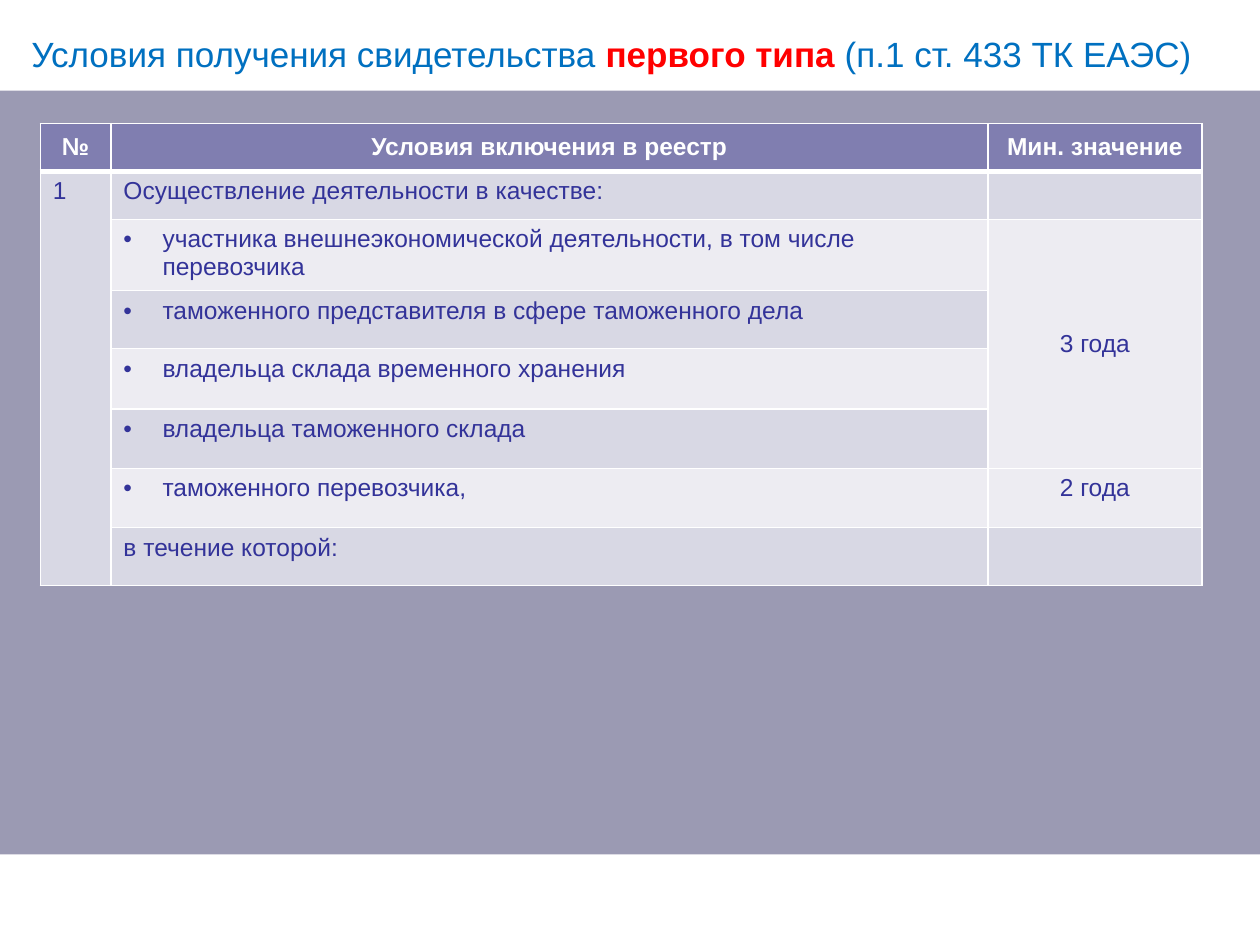
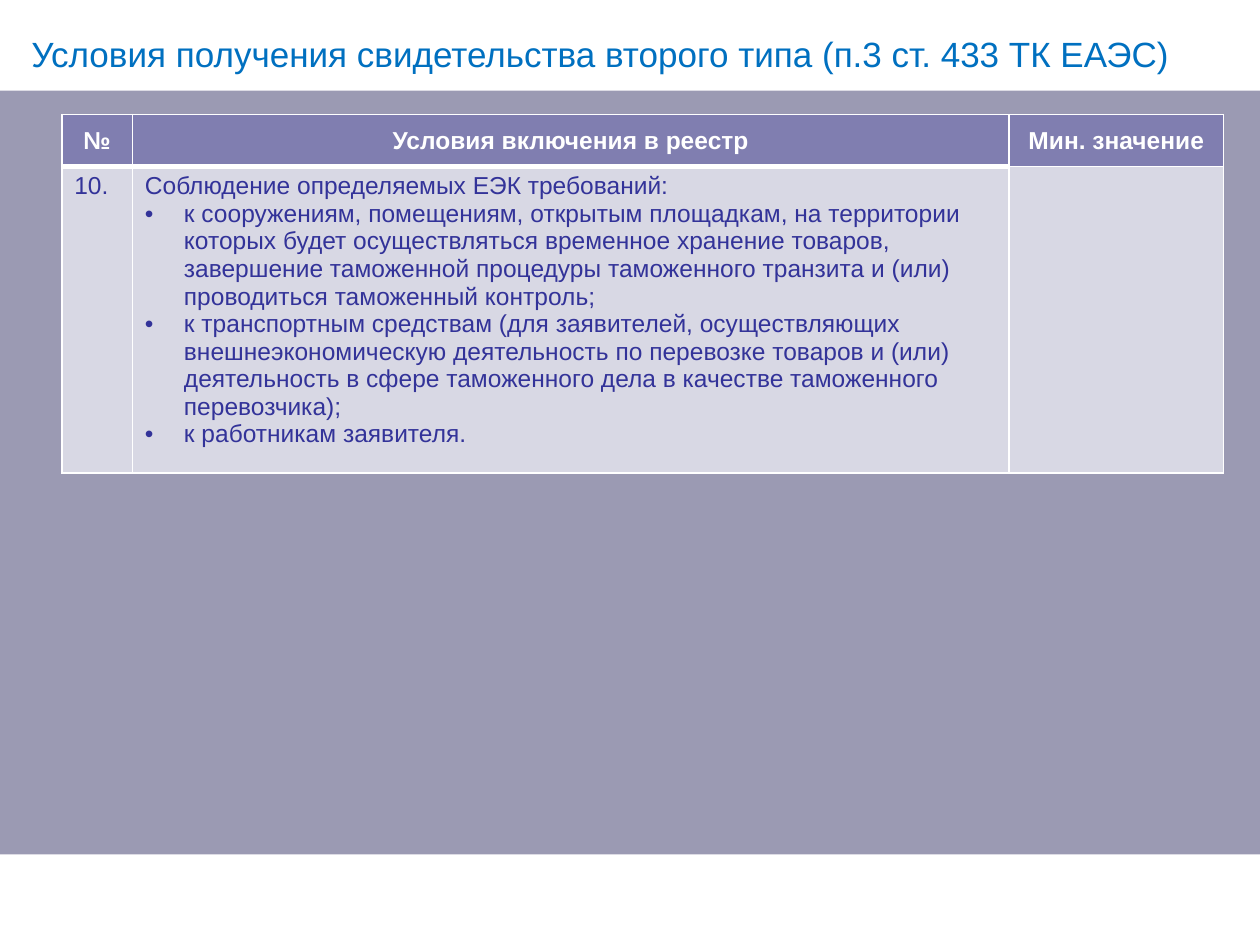
from dataclasses import dataclass, field

from lxml import etree
from pptx import Presentation, util as u
from pptx.dml.color import RGBColor
from pptx.enum import shapes, text
from pptx.oxml.ns import qn

WIDTH, HEIGHT = u.Inches(10), u.Inches(7.5)
FONT = "Arial"
WHITE, BACKDROP = "FFFFFF", "9B9AB3"
TITLE_BLUE, ACCENT_RED, BODY_INK = "0070C0", "FF0000", "333399"
HEADER_FILL, BAND_FILLS = "807EB0", ("EDECF2", "D8D8E4")
TITLE_SIZE, TABLE_SIZE = 20, 14
BAND_ROWS, BULLET_COLUMNS = 9.6, 3.1
TABLE_COLUMNS = (5.6, 69.6, 17)
HEADINGS = ("№", "Условия включения в реестр", "Мин. значение")
THIN, THICK = 1, 3


@dataclass(frozen=True)
class Piece:
    text: str
    color: str = TITLE_BLUE
    bold: bool = False


@dataclass(frozen=True)
class Line:
    text: str
    bullet: bool = False


@dataclass(frozen=True)
class Entry:
    row: int
    column: int
    lines: list[Line]
    span: int = 1
    centered: bool = False
    middle: bool = False


@dataclass(frozen=True)
class ConditionsSlide:
    title: list[Piece]
    left: float
    top: float
    row_heights: list[float]
    entries: list[Entry]
    header_rules: tuple[int, ...] = field(default=(THICK, THICK, THICK))


FIRST_TYPE = ConditionsSlide(
    title=[
        Piece("Условия получения свидетельства "),
        Piece("первого типа ", ACCENT_RED, True),
        Piece("(п.1 ст. 433 ТК ЕАЭС)"),
    ],
    left=3.2,
    top=13.07,
    row_heights=[5.07, 5.07, 5.07, 6.13, 6.4, 6.27, 6.27, 6.13],
    entries=[
        Entry(1, 0, [Line("1")], span=7),
        Entry(1, 1, [Line("Осуществление деятельности в качестве:")]),
        Entry(2, 1, [Line("участника внешнеэкономической деятельности, в том числе перевозчика", True)]),
        Entry(2, 2, [Line("3 года")], span=4, centered=True, middle=True),
        Entry(3, 1, [Line("таможенного представителя в сфере таможенного дела", True)]),
        Entry(4, 1, [Line("владельца склада временного хранения", True)]),
        Entry(5, 1, [Line("владельца таможенного склада", True)]),
        Entry(6, 1, [Line("таможенного перевозчика,", True)]),
        Entry(6, 2, [Line("2 года")], centered=True),
        Entry(7, 1, [Line("в течение которой:")]),
    ],
)

SECOND_TYPE = ConditionsSlide(
    title=[Piece("Условия получения свидетельства второго типа (п.3 ст. 433 ТК ЕАЭС)")],
    left=4.9,
    top=12.13,
    row_heights=[5.47, 24.13],
    entries=[
        Entry(1, 0, [Line("10.")]),
        Entry(1, 1, [
            Line("Соблюдение определяемых ЕЭК требований:"),
            Line("к сооружениям, помещениям, открытым площадкам, на территории которых будет "
                 "осуществляться временное хранение товаров, завершение таможенной процедуры "
                 "таможенного транзита и (или) проводиться таможенный контроль;", True),
            Line("к транспортным средствам (для заявителей, осуществляющих внешнеэкономическую "
                 "деятельность по перевозке товаров и (или) деятельность в сфере таможенного дела "
                 "в качестве таможенного перевозчика);", True),
            Line("к работникам заявителя.", True),
        ]),
    ],
    header_rules=(THICK, THICK, THIN),
)


def columns(count: float) -> int:
    return round(WIDTH * count / 100)


def rows(count: float) -> int:
    return round(HEIGHT * count / 100)


def rgb(color: str) -> RGBColor:
    return RGBColor.from_string(color)


def style_run(r, size: float, color: str, bold: bool) -> None:
    r.font.name = FONT
    r.font.size = u.Pt(size)
    r.font.bold = bold
    r.font.color.rgb = rgb(color)


def draw_band(s, top: float) -> None:
    band = s.shapes.add_shape(shapes.MSO_SHAPE.RECTANGLE, 0, rows(top), WIDTH, rows(BAND_ROWS))
    band.shadow.inherit = False
    band.fill.solid()
    band.fill.fore_color.rgb = rgb(WHITE)
    band.line.fill.background()


def draw_title(s, pieces: list[Piece]) -> None:
    box = s.shapes.add_textbox(columns(1.5), rows(2.27), columns(95.6), rows(6.93))
    tf = box.text_frame
    tf.word_wrap = True
    tf.margin_top = rows(1.2)
    for piece in pieces:
        r = tf.paragraphs[0].add_run()
        r.text = piece.text
        style_run(r, TITLE_SIZE, piece.color, piece.bold)


def add_bullet(p) -> None:
    p_pr = p._p.get_or_add_pPr()
    p_pr.set("marL", str(columns(BULLET_COLUMNS)))
    p_pr.set("indent", str(-columns(BULLET_COLUMNS)))
    etree.SubElement(p_pr, qn("a:buFont"), typeface=FONT)
    etree.SubElement(p_pr, qn("a:buChar"), char="•")


def set_borders(cell, top: int, bottom: int) -> None:
    tc_pr = cell._tc.get_or_add_tcPr()
    for side, width in (("L", THIN), ("R", THIN), ("T", top), ("B", bottom)):
        border = etree.SubElement(tc_pr, qn(f"a:ln{side}"), w=str(u.Pt(width)))
        fill = etree.SubElement(border, qn("a:solidFill"))
        etree.SubElement(fill, qn("a:srgbClr"), val=WHITE)


def prepare_cell(cell, row: int, header_rule: int) -> None:
    set_borders(cell, header_rule if row == 1 else THIN, header_rule if row == 0 else THIN)
    cell.fill.solid()
    cell.fill.fore_color.rgb = rgb(BAND_FILLS[row % 2] if row else HEADER_FILL)
    p = cell.text_frame.paragraphs[0]._p
    etree.SubElement(p, qn("a:endParaRPr"), sz=str(TABLE_SIZE * 100))


def write_entry(table, entry: Entry) -> None:
    cell = table.cell(entry.row, entry.column)
    if entry.span > 1:
        cell.merge(table.cell(entry.row + entry.span - 1, entry.column))
    if entry.middle:
        cell.vertical_anchor = text.MSO_ANCHOR.MIDDLE
    is_header = entry.row == 0
    tf = cell.text_frame
    tf.text = "\n".join(line.text for line in entry.lines)
    for p, line in zip(tf.paragraphs, entry.lines):
        if line.bullet:
            add_bullet(p)
        if entry.centered:
            p.alignment = text.PP_ALIGN.CENTER
        style_run(p.runs[0], TABLE_SIZE, WHITE if is_header else BODY_INK, is_header)


def draw_table(s, content: ConditionsSlide) -> None:
    frame = s.shapes.add_table(
        len(content.row_heights), len(TABLE_COLUMNS),
        columns(content.left), rows(content.top),
        columns(sum(TABLE_COLUMNS)), rows(sum(content.row_heights)),
    )
    table = frame.table
    for column, width in zip(table.columns, TABLE_COLUMNS):
        column.width = columns(width)
    for row, (table_row, height) in enumerate(zip(table.rows, content.row_heights)):
        table_row.height = rows(height)
        for cell, rule in zip(table_row.cells, content.header_rules):
            prepare_cell(cell, row, rule)
    headings = [
        Entry(0, column, [Line(heading)], centered=True, middle=True)
        for column, heading in enumerate(HEADINGS)
    ]
    for entry in headings + content.entries:
        write_entry(table, entry)


def draw_slide(prs, content: ConditionsSlide) -> None:
    s = prs.slides.add_slide(prs.slide_layouts[6])
    for top in (0, 100 - BAND_ROWS):
        draw_band(s, top)
    draw_title(s, content.title)
    draw_table(s, content)


def main() -> None:
    prs = Presentation()
    prs.slide_width, prs.slide_height = WIDTH, HEIGHT
    backdrop = prs.slide_master.background.fill
    backdrop.solid()
    backdrop.fore_color.rgb = rgb(BACKDROP)
    for content in (FIRST_TYPE, SECOND_TYPE):
        draw_slide(prs, content)
    prs.save("out.pptx")


if __name__ == "__main__":
    main()
